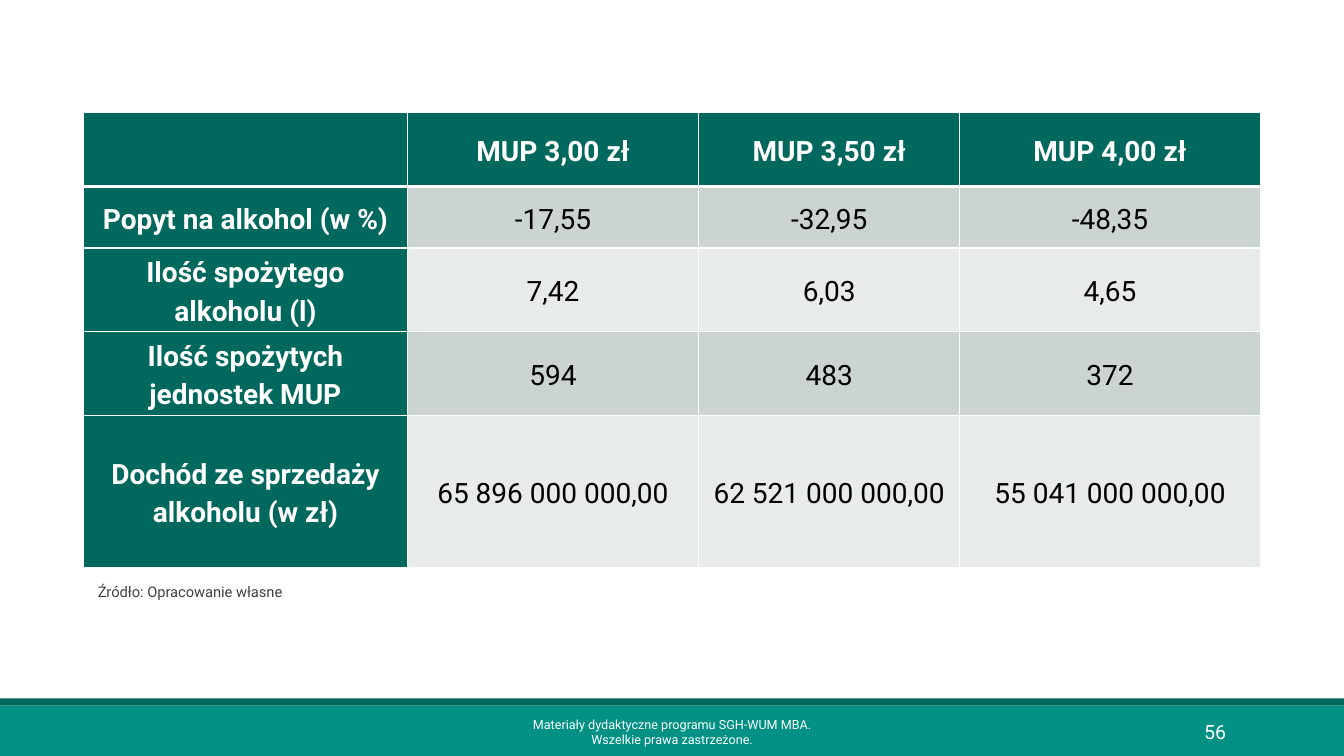
from pptx import Presentation
from pptx import util as u
from pptx.dml.color import RGBColor
from pptx.enum import shapes, text
from pptx.oxml import parse_xml
from pptx.oxml.ns import nsdecls

FONT = "Roboto"
WHITE, DARK, TEAL = "FFFFFF", "00685C", "009184"
BANDS = ["CCD4D2", "E7EBEA"]
MID = text.MSO_ANCHOR.MIDDLE
TOP = text.MSO_ANCHOR.TOP
LEFT, MID_H, RIGHT = text.PP_ALIGN.LEFT, text.PP_ALIGN.CENTER, text.PP_ALIGN.RIGHT


def tint(part, code):
    if hasattr(part, "solid"):
        part.solid()
        part = part.fore_color
    part.rgb = RGBColor.from_string(code)


def style(par, words, size, code, align, bold=False):
    par.text = words
    par.alignment = align
    for run in par.runs:
        run.font.name = FONT
        run.font.size = u.Pt(size)
        run.font.bold = bold
        tint(run.font.color, code)


deck = Presentation()
deck.slide_width, deck.slide_height = u.Inches(13.33), u.Inches(7.5)
slide = deck.slides.add_slide(deck.slide_layouts[6])

for top, high, code in [(7, 0.5, TEAL), (6.93, 0.07, DARK)]:
    bar = slide.shapes.add_shape(
        shapes.MSO_SHAPE.RECTANGLE, 0, u.Inches(top), deck.slide_width, u.Inches(high))
    bar.shadow.inherit = False
    tint(bar.fill, code)
    bar.line.fill.background()

rows = [
    ["", "MUP 3,00 zł", "MUP 3,50 zł", "MUP 4,00 zł"],
    ["Popyt na alkohol (w %)", "-17,55", "-32,95", "-48,35"],
    ["Ilość spożytego alkoholu (l)", "7,42", "6,03", "4,65"],
    ["Ilość spożytych jednostek MUP", "594", "483", "372"],
    ["Dochód ze sprzedaży alkoholu (w zł)",
     "65 896 000 000,00", "62 521 000 000,00", "55 041 000 000,00"],
]
wides = [3.21, 2.89, 2.59, 2.98]
highs = [0.73, 0.61, 0.83, 0.83, 1.51]
table = slide.shapes.add_table(
    len(rows), len(wides), u.Inches(0.83), u.Inches(1.12),
    u.Inches(sum(wides)), u.Inches(sum(highs))).table
for col, wide in zip(table.columns, wides):
    col.width = u.Inches(wide)

for r, (row, high) in enumerate(zip(rows, highs)):
    table.rows[r].height = u.Inches(high)
    for c, words in enumerate(row):
        cell = table.cell(r, c)
        head = r == 0 or c == 0
        cell.vertical_anchor = MID
        cell.margin_left = cell.margin_right = u.Inches(0.07)
        cell.margin_top = cell.margin_bottom = 0
        par = cell.text_frame.paragraphs[0]
        style(par, words, 20, WHITE if head else "000000", MID_H, head)
        par.line_spacing = 1.16
        par.space_after = u.Pt(8)
        for side in "LRTB":
            thick = 3 if (r, side) in [(0, "B"), (1, "T")] else 1
            cell._tc.get_or_add_tcPr().append(parse_xml(
                f'<a:ln{side} {nsdecls("a")} w="{u.Pt(thick)}"><a:solidFill>'
                f'<a:srgbClr val="{WHITE}"/></a:solidFill></a:ln{side}>'))
        tint(cell.fill, DARK if head else BANDS[(r - 1) % 2])

notes = [
    ("Materiały dydaktyczne programu SGH-WUM MBA.\vWszelkie prawa zastrzeżone.",
     4.03, 7.06, 5.27, 0.4, 9, WHITE, MID_H, MID, 0.1, 1),
    ("56", 10.83, 7.06, 1.43, 0.4, 14, WHITE, RIGHT, MID, 0.1, 1),
    ("Źródło: Opracowanie własne",
     0.97, 5.75, 11.54, 0.4, 10.5, "404040", LEFT, TOP, 0, 0.9),
]
for words, left, top, wide, high, size, code, align, anchor, inset, lead in notes:
    box = slide.shapes.add_textbox(*map(u.Inches, (left, top, wide, high)))
    frame = box.text_frame
    frame.word_wrap = True
    frame.vertical_anchor = anchor
    frame.margin_left = frame.margin_right = u.Inches(inset)
    par = frame.paragraphs[0]
    style(par, words, size, code, align)
    par.line_spacing = lead

deck.save("out.pptx")
